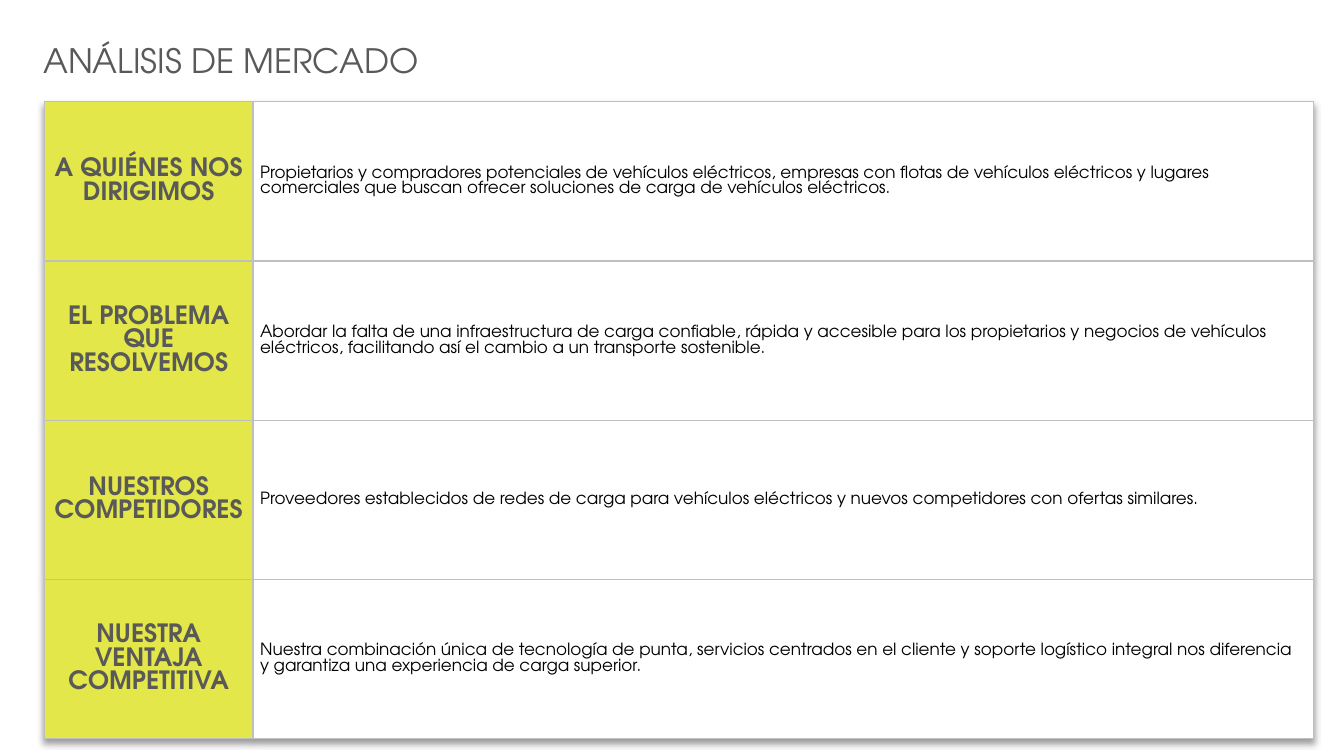
import dataclasses

import lxml.etree
import pptx
import pptx.dml.color
import pptx.enum.text
import pptx.oxml
import pptx.oxml.ns
import pptx.util

Inches = pptx.util.Inches
Align = pptx.enum.text.PP_ALIGN
Anchor = pptx.enum.text.MSO_ANCHOR


@dataclasses.dataclass(frozen=True)
class Theme:
    font: str = "TeX Gyre Adventor"
    heading: str = "595959"
    body: str = "000000"
    accent: str = "E3E749"
    paper: str = "FFFFFF"
    border: str = "BFBFBF"
    title_size: int = 24
    label_size: int = 18
    body_size: int = 12
    border_width: int = 1


MARKET_ROWS = [
    ("A QUIÉNES NOS DIRIGIMOS",
     "Propietarios y compradores potenciales de vehículos eléctricos, empresas con flotas de "
     "vehículos eléctricos y lugares comerciales que buscan ofrecer soluciones de carga de "
     "vehículos eléctricos."),
    ("EL PROBLEMA QUE RESOLVEMOS",
     "Abordar la falta de una infraestructura de carga confiable, rápida y accesible para los "
     "propietarios y negocios de vehículos eléctricos, facilitando así el cambio a un "
     "transporte sostenible."),
    ("NUESTROS COMPETIDORES",
     "Proveedores establecidos de redes de carga para vehículos eléctricos y nuevos "
     "competidores con ofertas similares."),
    ("NUESTRA VENTAJA COMPETITIVA",
     "Nuestra combinación única de tecnología de punta, servicios centrados en el cliente y "
     "soporte logístico integral nos diferencia y garantiza una experiencia de carga superior."),
]


def write_text(frame, text, *, font, size, color, bold=False, align=Align.LEFT):
    para = frame.paragraphs[0]
    para.alignment = align
    span = para.add_run()
    span.text = text
    span.font.name = font
    span.font.size = pptx.util.Pt(size)
    span.font.bold = bold
    span.font.color.rgb = pptx.dml.color.RGBColor.from_string(color)


class SlideBuilder:
    def __init__(self, slide, theme):
        self.slide = slide
        self.theme = theme

    def title(self, text, left, top, width, height):
        box = self.slide.shapes.add_textbox(
            Inches(left), Inches(top), Inches(width), Inches(height))
        box.text_frame.word_wrap = True
        write_text(box.text_frame, text, font=self.theme.font,
                   size=self.theme.title_size, color=self.theme.heading)

    def table(self, rows, left, top, column_widths, row_height):
        theme = self.theme
        table = self.slide.shapes.add_table(
            len(rows), len(column_widths), Inches(left), Inches(top),
            Inches(sum(column_widths)), Inches(row_height * len(rows))).table
        table.first_row = table.horz_banding = False
        self.table_shadow(table)
        for column, width in zip(table.columns, column_widths):
            column.width = Inches(width)
        for row, (label, description) in enumerate(rows):
            table.rows[row].height = Inches(row_height)
            self.cell(table.cell(row, 0), label, theme.accent, size=theme.label_size,
                      color=theme.heading, bold=True, align=Align.CENTER)
            body = table.cell(row, 1)
            body.margin_left = body.margin_right = Inches(0.07)
            body.margin_top = body.margin_bottom = 0
            self.cell(body, description, theme.paper, size=theme.body_size, color=theme.body)

    def cell(self, cell, text, fill, **text_format):
        cell.vertical_anchor = Anchor.MIDDLE
        write_text(cell.text_frame, text, font=self.theme.font, **text_format)
        self.cell_borders(cell)
        cell.fill.solid()
        cell.fill.fore_color.rgb = pptx.dml.color.RGBColor.from_string(fill)

    def cell_borders(self, cell):
        """Draw all four borders; they must precede the fill in the cell's XML."""
        properties = cell._tc.get_or_add_tcPr()
        for side in ("lnL", "lnR", "lnT", "lnB"):
            line = lxml.etree.SubElement(
                properties, pptx.oxml.ns.qn(f"a:{side}"),
                w=str(pptx.util.Pt(self.theme.border_width)))
            fill = lxml.etree.SubElement(line, pptx.oxml.ns.qn("a:solidFill"))
            lxml.etree.SubElement(fill, pptx.oxml.ns.qn("a:srgbClr"), val=self.theme.border)

    def table_shadow(self, table):
        """Add a soft shadow that falls straight down."""
        effects = pptx.oxml.parse_xml(
            f'<a:effectLst {pptx.oxml.ns.nsdecls("a")}>'
            '<a:outerShdw blurRad="50800" dist="38100" dir="5400000" algn="t" rotWithShape="0">'
            '<a:srgbClr val="000000"><a:alpha val="40000"/></a:srgbClr>'
            '</a:outerShdw></a:effectLst>')
        table._tbl.tblPr.insert(0, effects)


def main():
    deck = pptx.Presentation()
    deck.slide_width, deck.slide_height = Inches(13.33), Inches(7.5)
    page = SlideBuilder(deck.slides.add_slide(deck.slide_layouts[6]), Theme())
    page.title("ANÁLISIS DE MERCADO", 0.33, 0.35, 8.08, 0.5)
    page.table(MARKET_ROWS, 0.44, 1.01, column_widths=(2.07, 10.52), row_height=1.58)
    deck.save("out.pptx")


if __name__ == "__main__":
    main()
